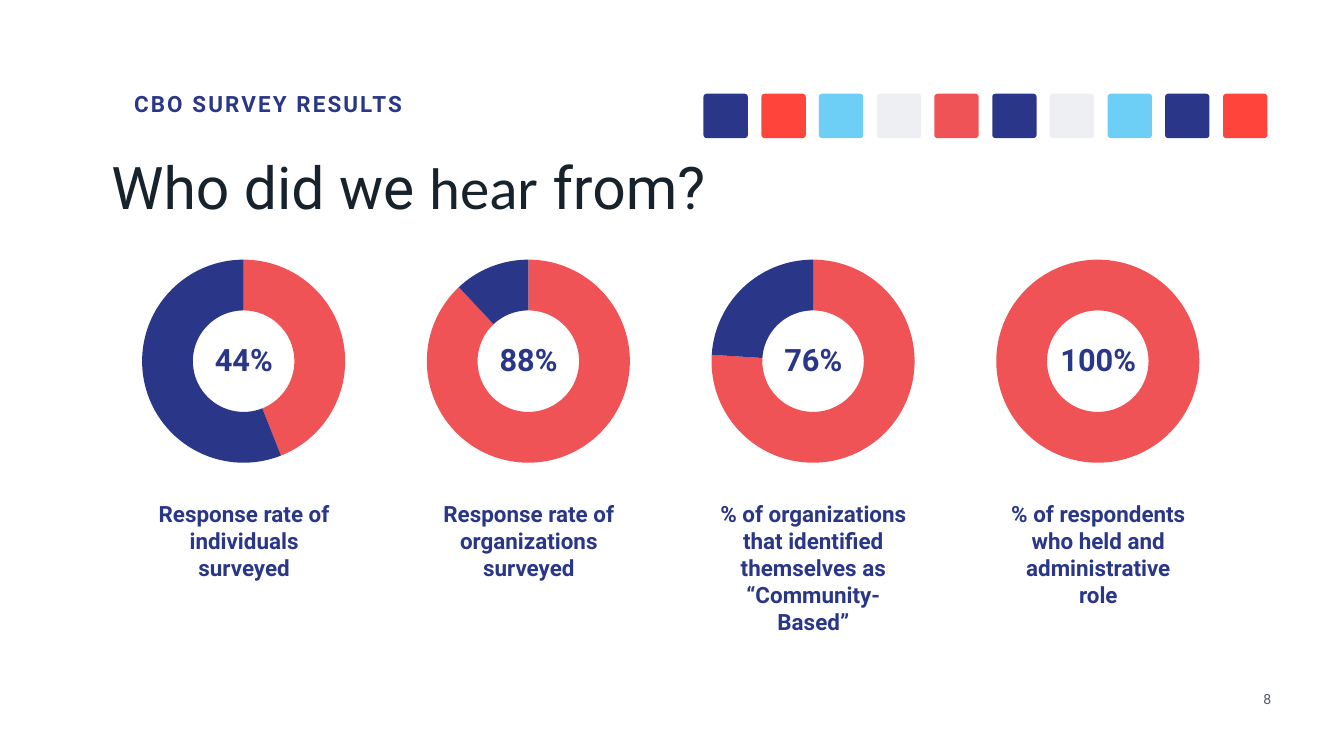
"""Build the survey results slide with four doughnut charts."""
from lxml.etree import SubElement
from pptx import Presentation
from pptx.chart.data import CategoryChartData
from pptx.dml.color import RGBColor
from pptx.enum.chart import XL_CHART_TYPE as CHART
from pptx.enum.shapes import MSO_SHAPE as SHAPE
from pptx.enum.text import MSO_ANCHOR as ANCHOR, PP_ALIGN as ALIGN
from pptx.oxml.ns import qn
from pptx.util import Pt

PX = 9144
NAVY = RGBColor(0x2A, 0x36, 0x88)
CORAL = RGBColor(0xF0, 0x53, 0x55)
RED = RGBColor(0xFF, 0x44, 0x3B)
SKY = RGBColor(0x6D, 0xCF, 0xF6)
PALE = RGBColor(0xEE, 0xEF, 0xF2)
INK = RGBColor(0x16, 0x22, 0x2C)
GREY = RGBColor(0x51, 0x58, 0x5F)
WHITE = RGBColor(0xFE, 0xFF, 0xFF)


def box(x, y, w, h):
    return [v * PX for v in (x, y, w, h)]


def add_text(area, text, size, color, bold=False, align=ALIGN.CENTER):
    tf = s.shapes.add_textbox(*area).text_frame
    tf.word_wrap = True
    tf.margin_left = tf.margin_right = tf.margin_top = tf.margin_bottom = 4 * PX
    p = tf.paragraphs[0]
    p.alignment = align
    p.add_run().text = text
    p.font.name, p.font.size, p.font.bold = "Roboto", Pt(size), bold
    p.font.color.rgb = color
    return tf


prs = Presentation()
prs.slide_width, prs.slide_height = 2667 * PX, 1500 * PX
s = prs.slides.add_slide(prs.slide_layouts[6])

add_text(box(2466, 1366, 98, 42), "8", 20, GREY)

p = add_text(box(217, 296, 1282, 173), "Who did we ", 84, INK, align=ALIGN.LEFT).paragraphs[0]
r = p.add_run()
r.text = "hear"
r.font.name = "Calibri"
p.add_run().text = " from?"

tf = add_text(box(262, 175, 612, 62), "CBO SURVEY RESULTS", 32, NAVY, True, ALIGN.LEFT)
tf.vertical_anchor = ANCHOR.MIDDLE
tf.paragraphs[0].runs[0].font.element.set("spc", "300") if hasattr(
    tf.paragraphs[0].runs[0].font, "element") else tf.paragraphs[0].runs[0]._r.get_or_add_rPr().set("spc", "300")

RESULTS = [
    (44, "Response rate of individuals surveyed", 381, 140),
    (88, "Response rate of organizations surveyed", 381, 140),
    (76, "% of organizations that identified themselves as “Community-Based”", 412, 140),
    (100, "% of respondents who held and administrative role", 381, 173),
]
LAYOUT = {"layoutTarget": "inner", "xMode": "edge", "yMode": "edge",
          "x": "0.045", "y": "0.033", "w": "0.91", "h": "0.935"}
for i, (share, caption, caption_w, share_w) in enumerate(RESULTS):
    left = 262 + 565 * i
    center = left + 222

    data = CategoryChartData()
    data.categories = ["1", "2"]
    data.add_series("Series 1", (share, 100 - share))
    chart = s.shapes.add_chart(CHART.DOUGHNUT, *box(left, 501, 443, 431), data).chart
    chart.has_legend = chart.has_title = False
    chart.font.name, chart.font.size = "Arial", Pt(10)
    chart.font.color.rgb = WHITE
    plot = chart.plots[0]
    plot.vary_by_categories = False
    plot.has_data_labels = False
    for n, color in enumerate((CORAL, NAVY if share < 100 else CORAL)):
        fmt = plot.series[0].points[n].format
        fmt.fill.solid()
        fmt.fill.fore_color.rgb = color
        fmt.line.fill.background()

    area = chart.element.find(".//" + qn("c:plotArea"))
    area.find(".//" + qn("c:holeSize")).set("val", "75")
    for old in area.findall(qn("c:layout")):
        area.remove(old)
    layout = SubElement(area, qn("c:layout"))
    area.insert(0, layout)
    manual = SubElement(layout, qn("c:manualLayout"))
    for tag, val in LAYOUT.items():
        SubElement(manual, qn("c:" + tag)).set("val", val)

    add_text(box(center - caption_w // 2, 989, caption_w, 87), caption, 32, NAVY, True)
    add_text(box(center - share_w // 2, 673, share_w, 87), f"{share}%", 44, NAVY, True)

for i, color in enumerate((NAVY, RED, SKY, PALE, CORAL, NAVY, PALE, SKY, NAVY, RED)):
    sp = s.shapes.add_shape(SHAPE.ROUNDED_RECTANGLE, *box(1396 + round(114.56 * i), 186, 88, 88))
    sp.adjustments[0] = 0.07
    sp.shadow.inherit = False
    sp.fill.solid()
    sp.fill.fore_color.rgb = color
    sp.line.fill.background()

prs.save("out.pptx")
